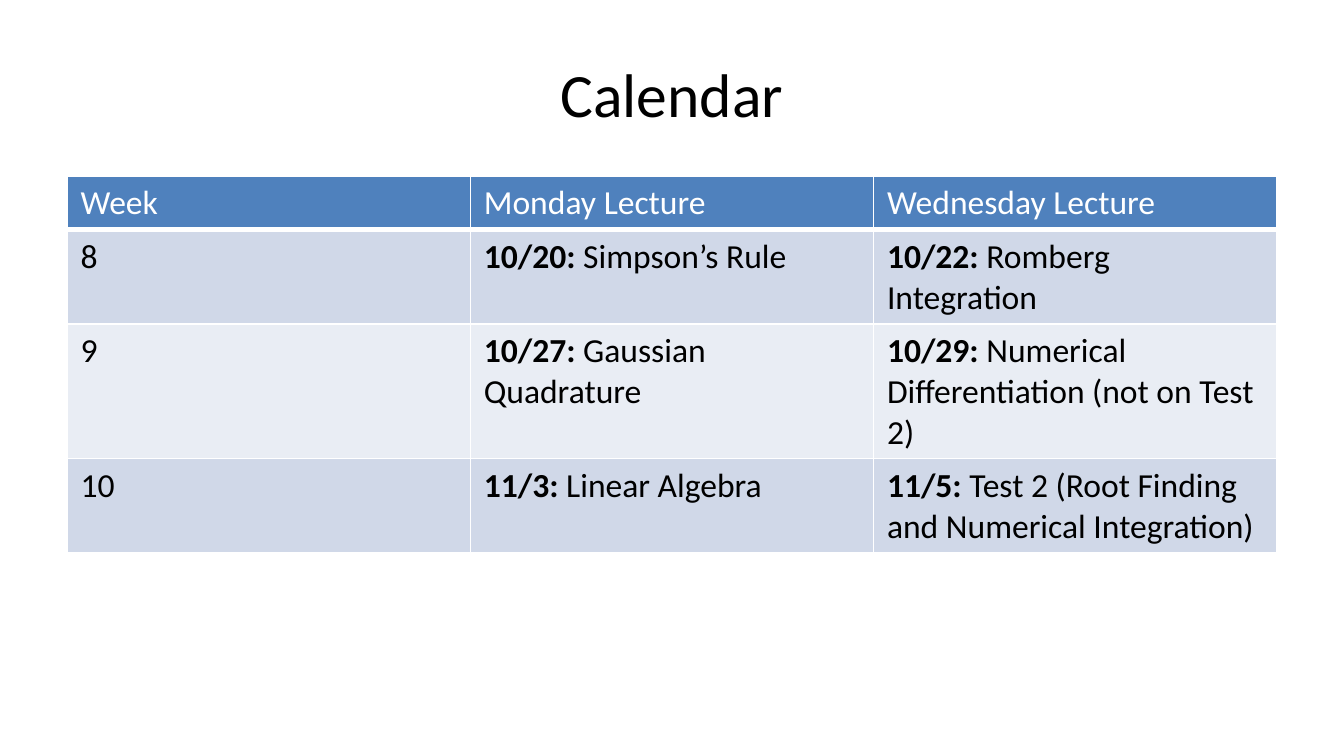
"""Build a lecture calendar slide with a title and a three-week table."""
from dataclasses import dataclass

from lxml import etree
from pptx import Presentation
from pptx.dml.color import RGBColor
from pptx.enum import text
from pptx.oxml import ns
from pptx.util import Inches, Pt

FONT = "Calibri"
COLORS = {
    "head": "4F81BD",
    "odd": "D0D8E8",
    "even": "E9EDF4",
    "white": "FFFFFF",
    "black": "000000",
}


@dataclass
class Entry:
    topic: str
    date: str = ""


@dataclass
class Week:
    cells: list[Entry]
    fill: str
    ink: str = "black"
    rule: float = 1


WEEKS = [
    Week([Entry("Week"), Entry("Monday Lecture"), Entry("Wednesday Lecture")],
         "head", "white", 3),
    Week([Entry("8"), Entry(" Simpson’s Rule", "10/20:"),
          Entry(" Romberg Integration", "10/22:")], "odd"),
    Week([Entry("9"), Entry(" Gaussian Quadrature", "10/27:"),
          Entry(" Numerical Differentiation (not on Test 2)", "10/29:")], "even"),
    Week([Entry("10"), Entry(" Linear Algebra", "11/3:"),
          Entry(" Test 2 (Root Finding and Numerical Integration)", "11/5:")], "odd"),
]


def style(run, size: float, ink: str, bold: bool = False) -> None:
    font = run.font
    font.name, font.size, font.bold = FONT, Pt(size), bold
    font.color.rgb = RGBColor.from_string(COLORS[ink])


def edge(cell, side: str, width: float) -> None:
    props = cell._tc.get_or_add_tcPr()
    line = etree.SubElement(props, ns.qn(f"a:ln{side}"), w=str(Pt(width)))
    fill = etree.SubElement(line, ns.qn("a:solidFill"))
    etree.SubElement(fill, ns.qn("a:srgbClr"), val=COLORS["white"])


def fill_cell(cell, entry: Entry, week: Week) -> None:
    for side, width in zip("LRTB", (1, 1, 1, week.rule)):
        edge(cell, side, width)
    cell.fill.solid()
    cell.fill.fore_color.rgb = RGBColor.from_string(COLORS[week.fill])
    para = cell.text_frame.paragraphs[0]
    para.text = entry.date or entry.topic
    style(para.runs[0], 18, week.ink, bool(entry.date))
    if entry.date:
        run = para.add_run()
        run.text = entry.topic
        style(run, 18, week.ink)


def add_title(slide, title: str) -> None:
    box = slide.shapes.add_textbox(Inches(0.5), Inches(0.22), Inches(9), Inches(0.94))
    frame = box.text_frame
    frame.word_wrap = True
    frame.vertical_anchor = text.MSO_ANCHOR.MIDDLE
    frame.text = title
    para = frame.paragraphs[0]
    para.alignment = text.PP_ALIGN.CENTER
    style(para.runs[0], 33, "black")


def add_weeks(slide, weeks: list[Week]) -> None:
    frame = slide.shapes.add_table(len(weeks), len(weeks[0].cells), Inches(0.5),
                                   Inches(1.31), Inches(9), Inches(1.75))
    table = frame.table
    table.horz_banding = False
    for row, week in zip(table.rows, weeks):
        row.height = Inches(0)
        for cell, entry in zip(row.cells, week.cells):
            fill_cell(cell, entry, week)
    frame.height = Inches(1.75)


def main() -> None:
    deck = Presentation()
    deck.slide_width, deck.slide_height = Inches(10), Inches(10 * 9 / 16)
    slide = deck.slides.add_slide(deck.slide_layouts[6])
    add_title(slide, "Calendar")
    add_weeks(slide, WEEKS)
    deck.save("out.pptx")


if __name__ == "__main__":
    main()
